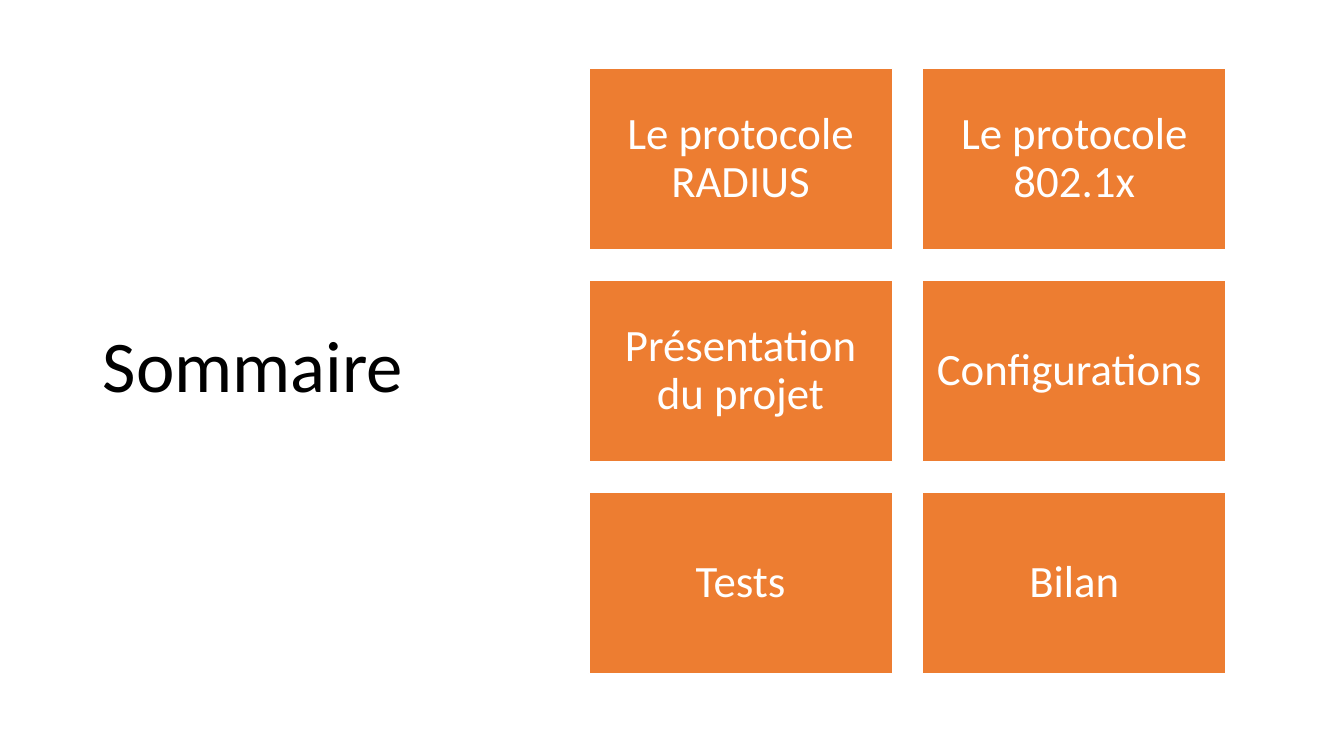
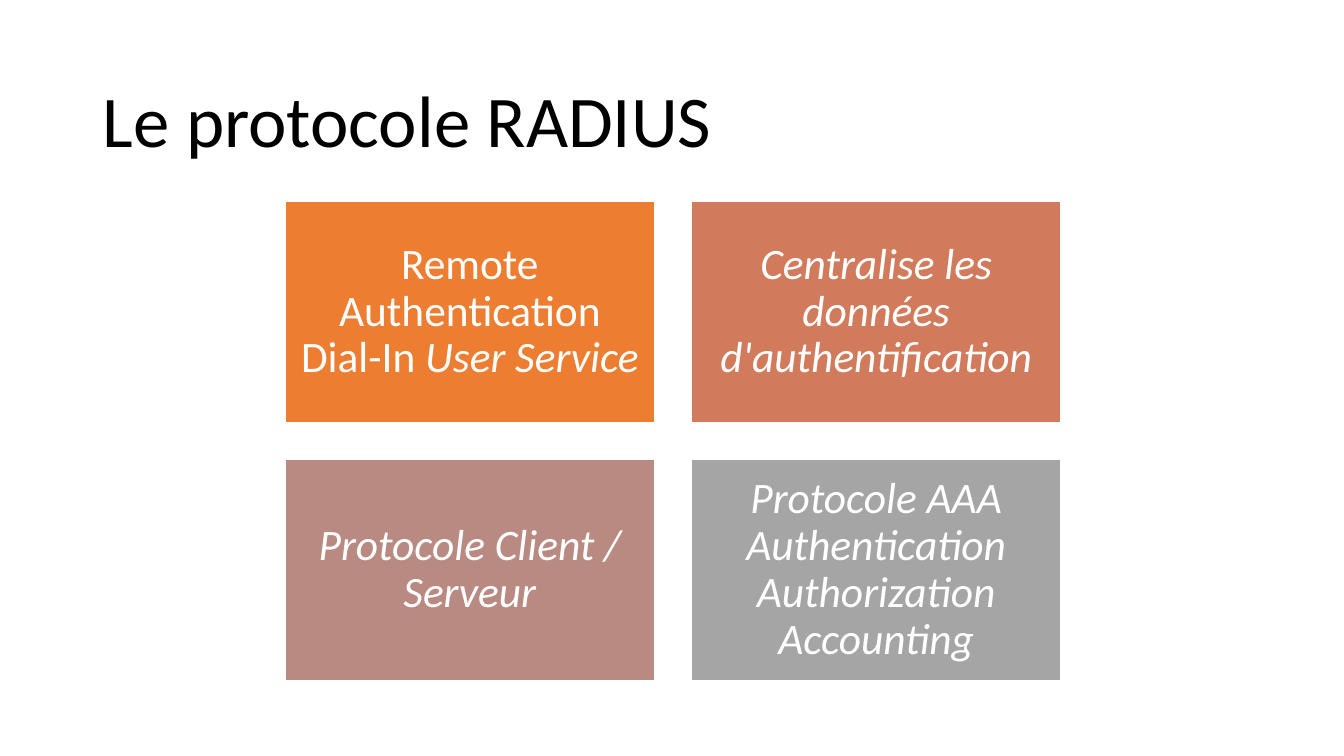
import pptx
import pptx.dml.color
import pptx.enum.shapes
import pptx.enum.text
import pptx.util

Inches = pptx.util.Inches
Pt = pptx.util.Pt
ALIGN = pptx.enum.text.PP_ALIGN
ANCHOR = pptx.enum.text.MSO_ANCHOR
AUTO_SIZE = pptx.enum.text.MSO_AUTO_SIZE

ORANGE, TERRACOTTA, ROSE, GREY = "ED7D31", "D17B5C", "B98A82", "A5A5A5"
WHITE, BLACK = "FFFFFF", "000000"


def color(hex_code):
    return pptx.dml.color.RGBColor.from_string(hex_code)


def apply(target, values):
    for name, value in values.items():
        setattr(target, name, value)


class Deck:
    """Shared style and the slide being built."""

    FONT = "Calibri"
    TITLE_SIZE = 52
    FRAME = {"word_wrap": True, "auto_size": AUTO_SIZE.NONE,
             "vertical_anchor": ANCHOR.MIDDLE}
    TILE_MARGINS = {f"margin_{side}": Inches(0.13)
                    for side in ("left", "top", "right", "bottom")}

    def __init__(self):
        self.presentation = pptx.Presentation()
        apply(self.presentation, {"slide_width": Inches(13.33),
                                  "slide_height": Inches(7.5)})
        self.slide = None

    def set_text(self, frame, parts, size, ink, align):
        """Fill a frame with one paragraph of (text, italic) parts."""
        apply(frame, self.FRAME)
        paragraph = frame.paragraphs[0]
        apply(paragraph, {"alignment": align, "line_spacing": 0.9})
        for text, italic in parts:
            run = paragraph.add_run()
            run.text = text
            apply(run.font, {"name": self.FONT, "size": Pt(size),
                             "italic": italic})
            run.font.color.rgb = color(ink)

    def add_slide(self, title, width, height):
        title_only = self.presentation.slide_layouts[5]
        self.slide = self.presentation.slides.add_slide(title_only)
        heading = self.slide.shapes.title
        apply(heading, {"left": Inches(0.92), "top": Inches(0.61),
                        "width": Inches(width), "height": Inches(height)})
        self.set_text(heading.text_frame, [(title, False)], self.TITLE_SIZE,
                      BLACK, ALIGN.LEFT)

    def add_tile(self, left, top, width, height, fill, parts, size):
        tile = self.slide.shapes.add_shape(
            pptx.enum.shapes.MSO_SHAPE.RECTANGLE,
            Inches(left), Inches(top), Inches(width), Inches(height))
        tile.shadow.inherit = False
        tile.fill.solid()
        tile.fill.fore_color.rgb = color(fill)
        tile.line.color.rgb = color(WHITE)
        tile.line.width = Pt(1)
        apply(tile.text_frame, self.TILE_MARGINS)
        self.set_text(tile.text_frame, parts, size, WHITE, ALIGN.CENTER)

    def add_tile_grid(self, tiles, left, top, width, height, gap, size,
                      columns=2):
        """Lay out (fill, parts) tiles row by row with equal gaps."""
        for index, (fill, parts) in enumerate(tiles):
            row, column = divmod(index, columns)
            self.add_tile(left + column * (width + gap),
                          top + row * (height + gap),
                          width, height, fill, parts, size)


def main():
    deck = Deck()

    # Agenda
    deck.add_slide("Sommaire", 3.69, 6.09)
    topics = ["Le protocole RADIUS", "Le protocole 802.1x",
              "Présentation du projet", "Configurations ",
              "Tests", "Bilan"]
    deck.add_tile_grid([(ORANGE, [(topic, False)]) for topic in topics],
                       left=5.84, top=0.68, width=3.01, height=1.8,
                       gap=0.3, size=32)

    # RADIUS protocol
    deck.add_slide("Le protocole RADIUS", 11.5, 1.24)
    features = [
        (ORANGE, [("Remote Authentication Dial-In ", False),
                  ("User Service", True)]),
        (TERRACOTTA, [("Centralise les données d'authentification", True)]),
        (ROSE, [("Protocole Client / Serveur", True)]),
        (GREY, [("Protocole AAA Authentication Authorization Accounting",
                 True)]),
    ]
    deck.add_tile_grid(features, left=2.83, top=2, width=3.66, height=2.19,
                       gap=0.37, size=31)

    deck.presentation.save("out.pptx")


if __name__ == "__main__":
    main()
